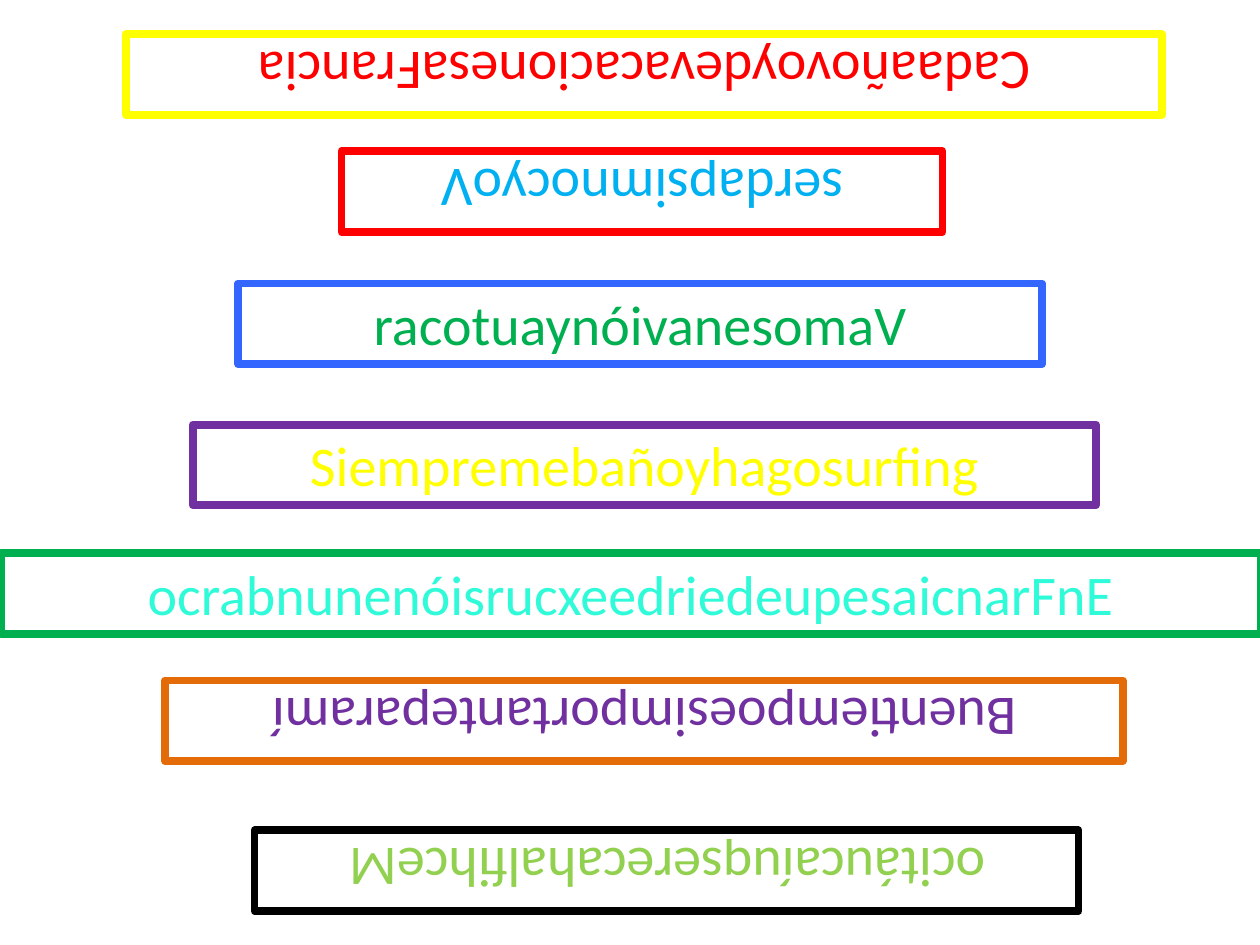
from pptx import Presentation
from pptx.dml.color import RGBColor
from pptx.enum.text import PP_ALIGN
from pptx.util import Inches, Pt

CENTER = PP_ALIGN.CENTER
BLANK_LAYOUT = 6

WHITE = RGBColor(0xFF, 0xFF, 0xFF)
BLACK = RGBColor(0x00, 0x00, 0x00)
YELLOW = RGBColor(0xFF, 0xFF, 0x00)
RED = RGBColor(0xFF, 0x00, 0x00)
SKY = RGBColor(0x00, 0xB0, 0xF0)
BLUE = RGBColor(0x33, 0x66, 0xFF)
GREEN = RGBColor(0x00, 0xB0, 0x50)
PURPLE = RGBColor(0x70, 0x30, 0xA0)
TURQUOISE = RGBColor(0x2F, 0xFB, 0xD9)
ORANGE = RGBColor(0xE3, 0x6C, 0x09)
LIME = RGBColor(0x92, 0xD0, 0x50)

UPRIGHT, UPSIDE_DOWN = 0, 180
SLIDE_WIDTH, SLIDE_HEIGHT = 10, 7.5
BOX_HEIGHT = 0.64

PUZZLES = [
    ("CadaañovoydevacacionesaFrancia", 1, 0.27, 8.22, UPSIDE_DOWN, YELLOW, RED),
    ("serdapsimnocyoV", 2.71, 1.2, 4.77, UPSIDE_DOWN, RED, SKY),
    ("racotuaynóivanesomaV", 1.89, 2.25, 6.38, UPRIGHT, BLUE, GREEN),
    ("Siempremebañoyhagosurfing", 1.53, 3.37, 7.17, UPRIGHT, PURPLE, YELLOW),
    ("ocrabnunenóisrucxeedriedeupesaicnarFnE", 0.01, 4.39, SLIDE_WIDTH, UPRIGHT, GREEN, TURQUOISE),
    ("Buentiempoesimportanteparamí", 1.31, 5.4, 7.6, UPSIDE_DOWN, ORANGE, PURPLE),
    ("ocitáucaíuqserecahalfihceM", 2.02, 6.59, 6.54, UPSIDE_DOWN, BLACK, LIME),
]


def add_puzzle(slide, text, left, top, width, rotation, border, color):
    box = slide.shapes.add_textbox(Inches(left), Inches(top), Inches(width), Inches(BOX_HEIGHT))
    box.rotation = rotation
    box.fill.solid()
    box.fill.fore_color.rgb = WHITE
    box.line.color.rgb = border
    box.line.width = Pt(4.5)
    box.text_frame.word_wrap = True
    paragraph = box.text_frame.paragraphs[0]
    paragraph.text = text
    paragraph.alignment = CENTER
    paragraph.font.name = "Calibri"
    paragraph.font.size = Pt(32)
    paragraph.font.color.rgb = color


def main():
    presentation = Presentation()
    presentation.slide_width = Inches(SLIDE_WIDTH)
    presentation.slide_height = Inches(SLIDE_HEIGHT)
    slide = presentation.slides.add_slide(presentation.slide_layouts[BLANK_LAYOUT])
    for puzzle in PUZZLES:
        add_puzzle(slide, *puzzle)
    presentation.save("out.pptx")


if __name__ == "__main__":
    main()
